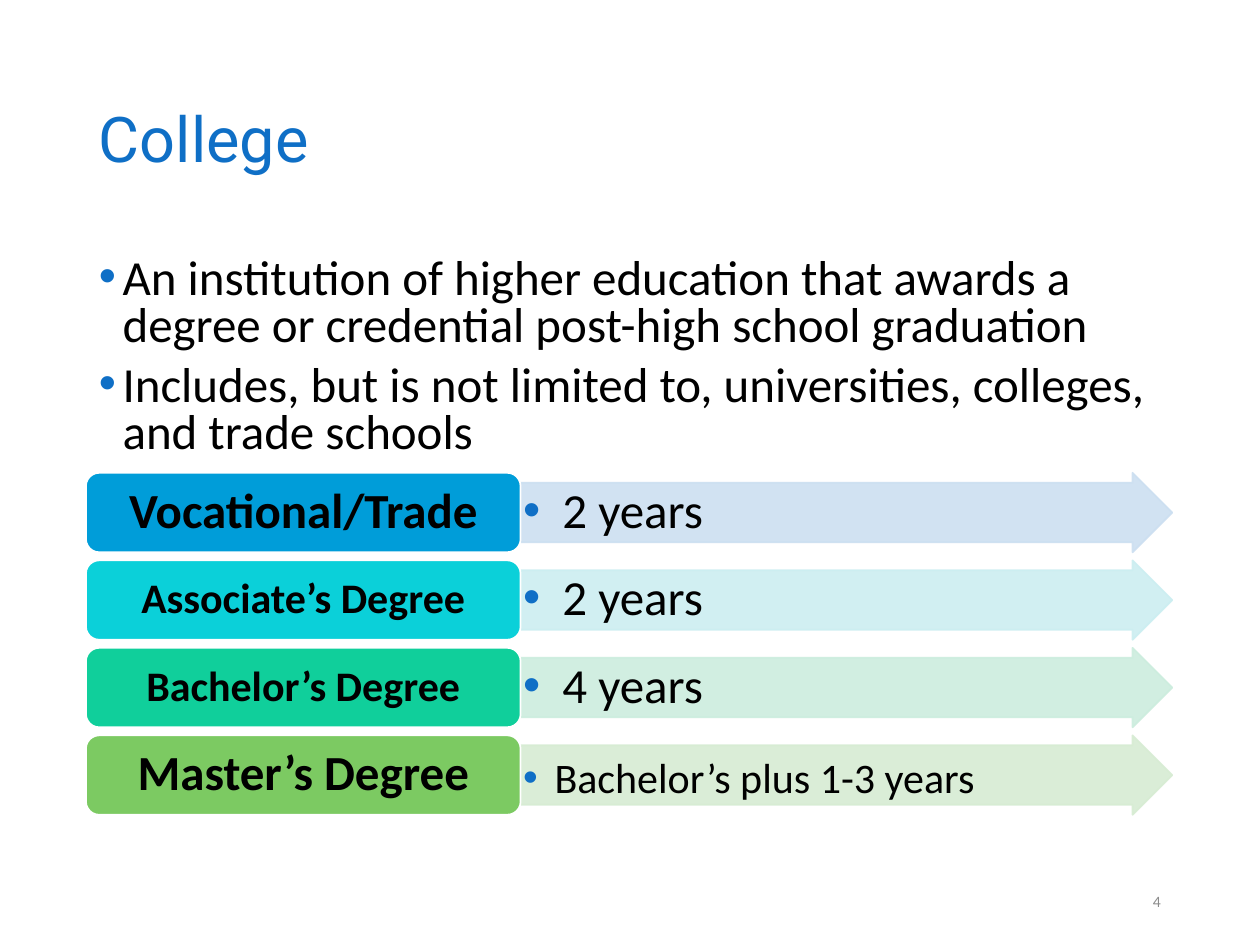
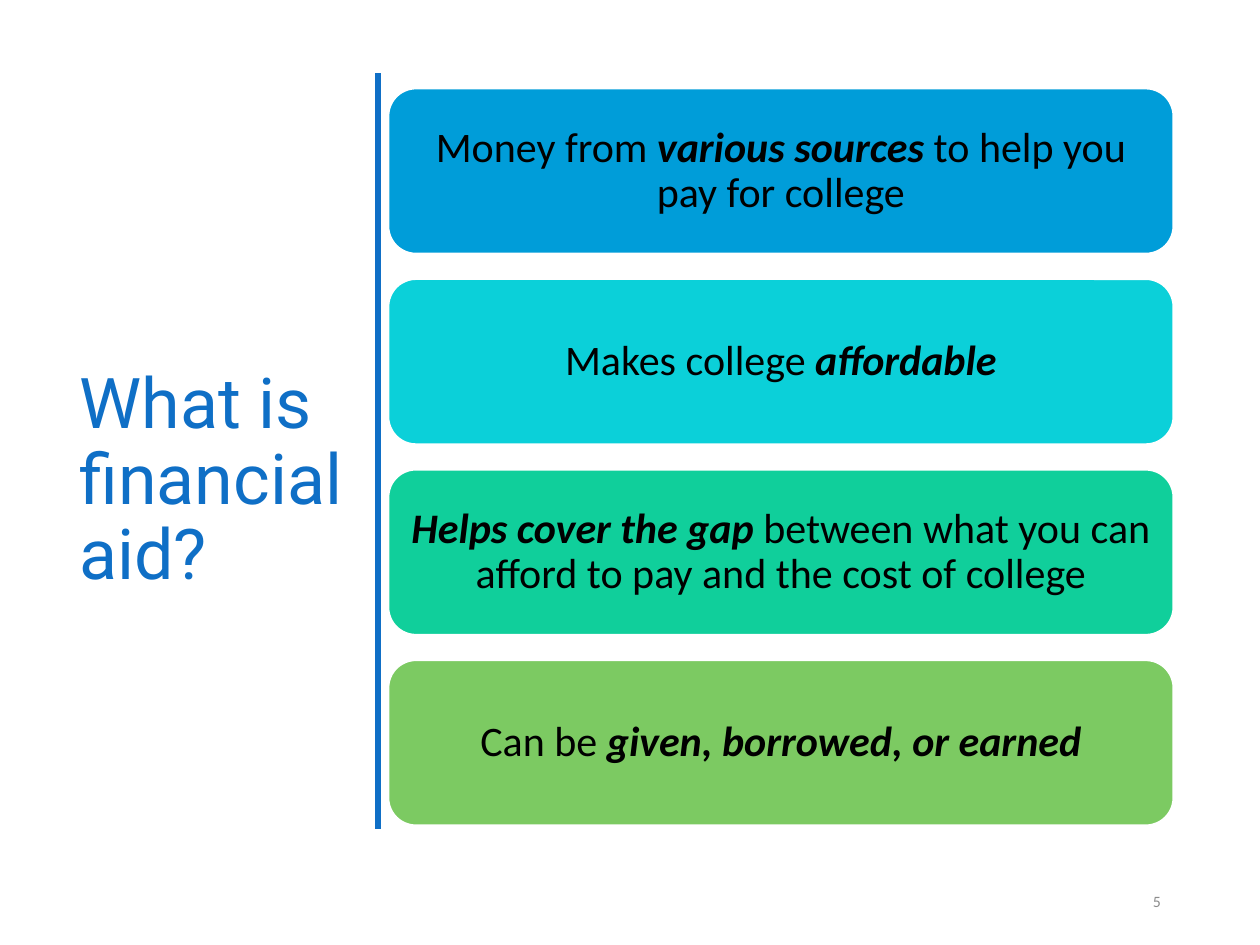
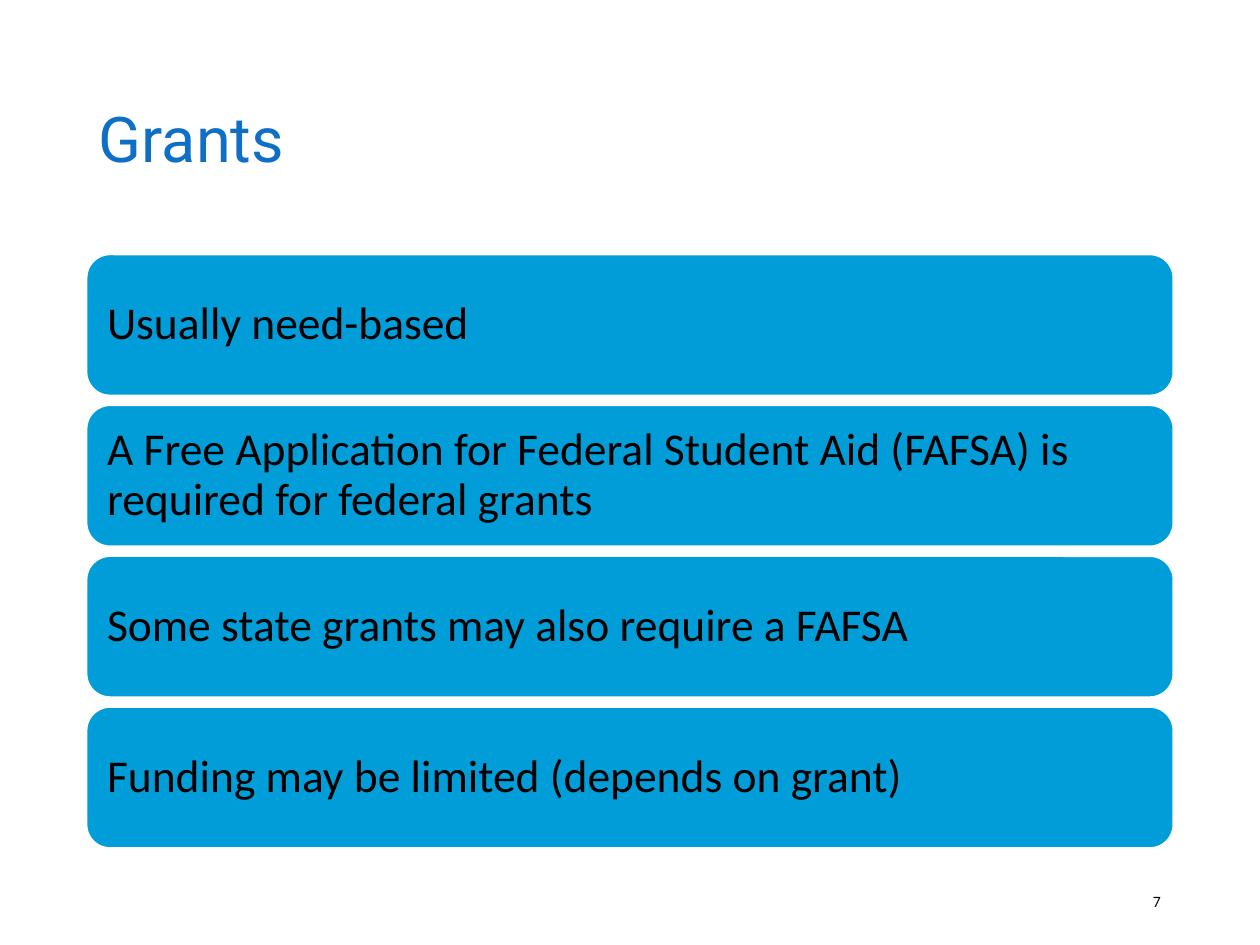
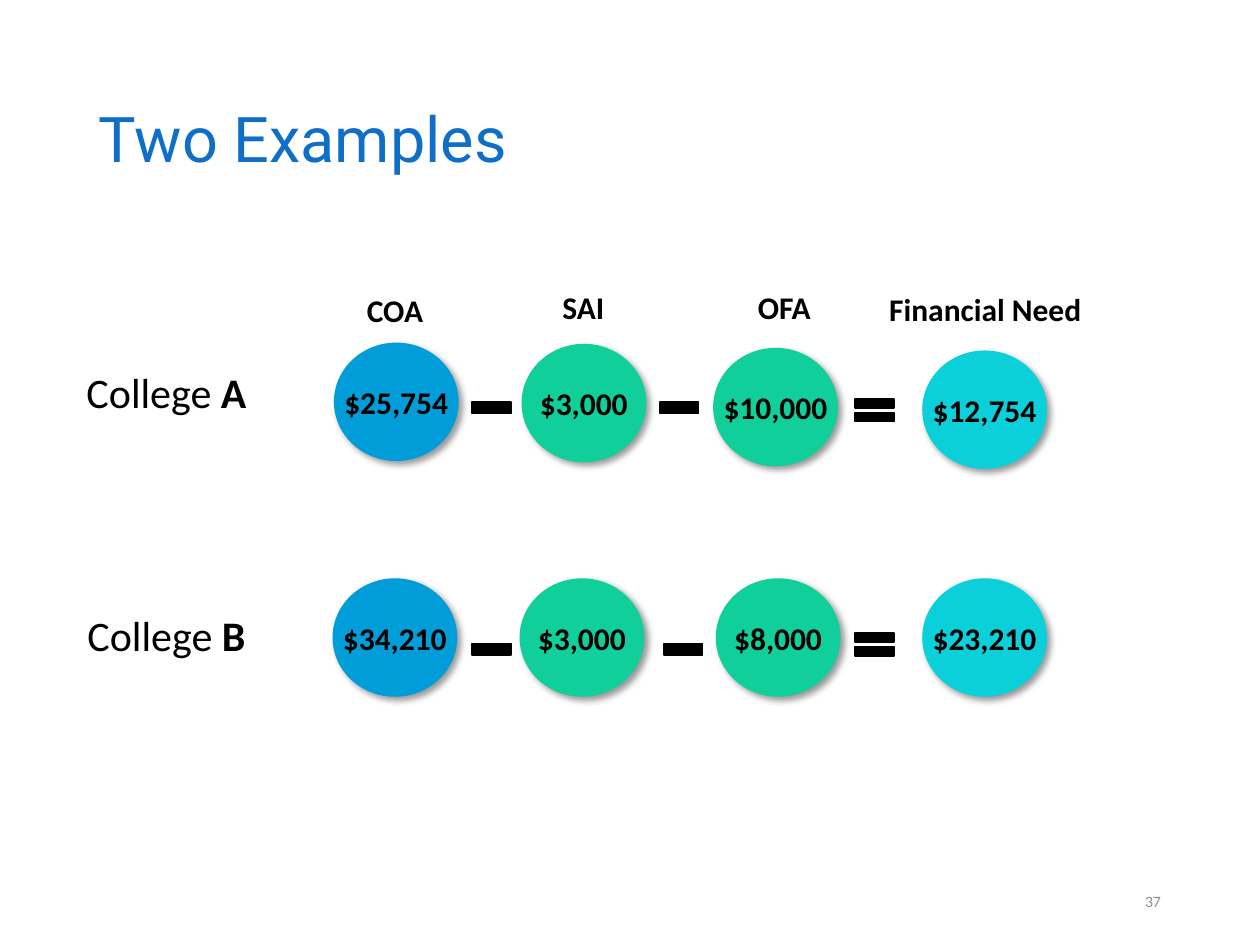
from dataclasses import dataclass
from typing import NamedTuple

from lxml.etree import SubElement
from pptx import Presentation
from pptx.dml.color import RGBColor
from pptx.enum.shapes import MSO_CONNECTOR as Connector, MSO_SHAPE as Shape
from pptx.enum.text import MSO_ANCHOR as Anchor, MSO_AUTO_SIZE as AutoSize, PP_ALIGN as Align
from pptx.oxml.ns import qn
from pptx.util import Pt

# Shared colours and fonts
BLUE = RGBColor(0x0F, 0x6F, 0xC6)
SKY = RGBColor(0x00, 0x9D, 0xD9)
CYAN = RGBColor(0x0B, 0xD0, 0xD9)
MINT = RGBColor(0x10, 0xCF, 0x9B)
GREEN = RGBColor(0x7C, 0xCA, 0x62)
PALE_SKY = RGBColor(0xCC, 0xDF, 0xF1)
PALE_CYAN = RGBColor(0xCC, 0xEE, 0xF1)
PALE_MINT = RGBColor(0xCC, 0xED, 0xDE)
PALE_GREEN = RGBColor(0xD7, 0xEC, 0xD3)
BLACK = RGBColor(0x00, 0x00, 0x00)
WHITE = RGBColor(0xFF, 0xFF, 0xFF)
GRAY = RGBColor(0x8C, 0x8C, 0x8C)
HEADING_FONT = "Roboto"
BODY_FONT = "Calibri"


class Area(NamedTuple):
    left: float
    top: float
    width: float
    height: float

    def lengths(self) -> list:
        return [Pt(value) for value in self]


class Span(NamedTuple):
    text: str
    bold: bool = False
    italic: bool = False


@dataclass
class Style:
    size: float
    color: RGBColor = BLACK
    font: str = BODY_FONT
    align: Align = Align.LEFT
    anchor: Anchor = Anchor.MIDDLE
    spacing: float = 1.0
    before: float = 0
    bullet_indent: float = 0
    inset_x: float = 7.2
    inset_y: float = 3.6
    wrap: bool = True
    grow: bool = False


@dataclass
class Degree:
    name: str
    name_size: float
    name_inset: tuple[float, float]
    color: RGBColor
    years: str
    years_size: float
    years_indent: float
    years_anchor: Anchor
    pale: RGBColor


class Circle(NamedTuple):
    left: float
    top: float
    amount: str
    color: RGBColor


class Sign(NamedTuple):
    kind: Shape
    left: float
    top: float


@dataclass
class College:
    letter: str
    label_top: float
    circles: list[Circle]
    signs: list[Sign]


# Shared styles and places
TITLE_AREA = Area(49.5, 28.75, 621, 104.5)
TITLE = Style(36, BLUE, HEADING_FONT, spacing=0.9)
SIDE_TITLE = Style(40, BLUE, HEADING_FONT, spacing=0.9, inset_x=5, inset_y=3)
NUMBER_AREA = Area(508.5, 500.5, 162, 28.75)
COLUMN_LABEL = Style(18, align=Align.CENTER, anchor=Anchor.TOP, wrap=False, grow=True)
COLLEGE_LABEL = Style(24, align=Align.CENTER, anchor=Anchor.TOP, grow=True)
AMOUNT = Style(18, align=Align.CENTER, wrap=False)
CIRCLE_SIZE = (71.3, 67.7)
SIGN_HEIGHTS = {Shape.MATH_MINUS: 28.1, Shape.MATH_EQUAL: 22.3}
SIGN_WIDTH = 30.2

DEGREES = [
    Degree("Vocational/Trade", 28, (8.6, 4.3), SKY, "2 years", 28, 22.5, Anchor.MIDDLE, PALE_SKY),
    Degree("Associate’s Degree", 24, (7.2, 3.6), CYAN, "2 years", 28, 22.5, Anchor.MIDDLE, PALE_CYAN),
    Degree("Bachelor’s Degree", 24, (7.2, 3.6), MINT, "4 years", 28, 22.5, Anchor.MIDDLE, PALE_MINT),
    Degree("Master’s Degree", 28, (8.6, 4.3), GREEN, "Bachelor’s plus 1-3 years", 24, 18,
           Anchor.BOTTOM, PALE_GREEN),
]

AID_POINTS = [
    (SKY, [Span("Money from "), Span("various sources ", True, True), Span("to help you pay for college")]),
    (CYAN, [Span("Makes college "), Span("affordable", True, True)]),
    (MINT, [Span("Helps cover the gap", True, True),
            Span(" between what you can afford to pay and the cost of college")]),
    (GREEN, [Span("Can be "), Span("given, borrowed, or earned", True, True)]),
]

GRANT_POINTS = [
    "Usually need-based",
    "A Free Application for Federal Student Aid (FAFSA) is required for federal grants",
    "Some state grants may also require a FAFSA",
    "Funding may be limited (depends on grant)",
]

COLUMN_LABELS = [
    ("COA", Area(202.3, 162.7, 46.8, 28.8)),
    ("SAI", Area(313.9, 161.3, 38.9, 28.8)),
    ("OFA", Area(425.5, 161.3, 45.4, 28.8)),
    ("Financial Need", Area(500.4, 162.2, 125.3, 28.8)),
]

COLLEGES = [
    College(
        "A", 206,
        [Circle(190.8, 195.8, "$25,754", SKY), Circle(298, 196.5, "$3,000", MINT),
         Circle(407.5, 198.8, "$10,000", MINT), Circle(527, 200.3, "$12,754", CYAN)],
        [Sign(Shape.MATH_MINUS, 265.7, 218.9), Sign(Shape.MATH_MINUS, 373, 218.9),
         Sign(Shape.MATH_EQUAL, 484.6, 223.2)],
    ),
    College(
        "B", 345,
        [Circle(190, 330.5, "$34,210", SKY), Circle(296.9, 330.5, "$3,000", MINT),
         Circle(409, 330.5, "$8,000", MINT), Circle(527, 330.5, "$23,210", CYAN)],
        [Sign(Shape.MATH_MINUS, 265.7, 357), Sign(Shape.MATH_MINUS, 375.3, 357),
         Sign(Shape.MATH_EQUAL, 484.6, 357)],
    ),
]


# Text
def add_bullet(para, indent: float) -> None:
    props = para._p.get_or_add_pPr()
    props.set("marL", str(Pt(indent)))
    props.set("indent", str(-Pt(indent)))
    color = SubElement(props, qn("a:buClr"))
    SubElement(color, qn("a:srgbClr"), val=str(BLUE))
    SubElement(props, qn("a:buFont"), typeface="Arial")
    SubElement(props, qn("a:buChar"), char="•")


def write(box, paragraphs: list[list[Span]], style: Style) -> None:
    frame = box.text_frame
    frame.word_wrap = style.wrap
    frame.auto_size = AutoSize.SHAPE_TO_FIT_TEXT if style.grow else AutoSize.NONE
    frame.vertical_anchor = style.anchor
    frame.margin_left = frame.margin_right = Pt(style.inset_x)
    frame.margin_top = frame.margin_bottom = Pt(style.inset_y)
    for index, spans in enumerate(paragraphs):
        para = frame.add_paragraph() if index else frame.paragraphs[0]
        if style.bullet_indent:
            add_bullet(para, style.bullet_indent)
        para.alignment = style.align
        para.line_spacing = style.spacing
        if index:
            para.space_before = Pt(style.before)
        for span in spans:
            run = para.add_run()
            run.text = span.text
            font = run.font
            font.name, font.size = style.font, Pt(style.size)
            font.bold, font.italic = span.bold, span.italic
            font.color.rgb = style.color


def add_text(page, area: Area, paragraphs: list[list[Span]], style: Style) -> None:
    write(page.shapes.add_textbox(*area.lengths()), paragraphs, style)


# Shapes
def add_block(page, kind: Shape, area: Area, color: RGBColor, line: RGBColor | None = None):
    block = page.shapes.add_shape(kind, *area.lengths())
    block.shadow.inherit = False
    block.fill.solid()
    block.fill.fore_color.rgb = color
    if line is None:
        block.line.fill.background()
    else:
        block.line.color.rgb = line
        block.line.width = Pt(1)
    return block


def add_card(page, area: Area, color: RGBColor, spans: list[Span], style: Style) -> None:
    write(add_block(page, Shape.ROUNDED_RECTANGLE, area, color, WHITE), [spans], style)


def add_arrow(page, area: Area, degree: Degree) -> None:
    arrow = add_block(page, Shape.RIGHT_ARROW, area, degree.pale, degree.pale)
    arrow.adjustments[0] = 0.75
    arrow.adjustments[1] = 0.5
    for color in list(arrow.element.spPr.iter(qn("a:srgbClr"))):
        SubElement(color, qn("a:alpha"), val="90000")
    style = Style(degree.years_size, anchor=degree.years_anchor, spacing=0.9,
                  bullet_indent=degree.years_indent, inset_x=1.4, inset_y=1.4)
    write(arrow, [[Span(degree.years)]], style)


def add_circle(page, circle: Circle) -> None:
    disc = add_block(page, Shape.OVAL, Area(circle.left, circle.top, *CIRCLE_SIZE), circle.color)
    effects = disc.element.spPr.find(qn("a:effectLst"))
    shadow = SubElement(effects, qn("a:outerShdw"), blurRad=str(Pt(4)), dist=str(Pt(3)),
                        dir=str(45 * 60000), algn="tl", rotWithShape="0")
    color = SubElement(shadow, qn("a:srgbClr"), val=str(BLACK))
    SubElement(color, qn("a:alpha"), val="40000")
    write(disc, [[Span(circle.amount, True)]], AMOUNT)


# Slides
def new_page(deck, number: int, title: str, number_color: RGBColor = GRAY,
             title_area: Area = TITLE_AREA, title_style: Style = TITLE):
    page = deck.slides.add_slide(deck.slide_layouts[6])
    add_text(page, title_area, [[Span(title)]], title_style)
    add_text(page, NUMBER_AREA, [[Span(str(number))]], Style(9, number_color, align=Align.RIGHT))
    return page


def build_college(deck) -> None:
    page = new_page(deck, 4, "College")
    body = Style(28, anchor=Anchor.TOP, spacing=0.8, before=7.5, bullet_indent=13.5)
    add_text(page, Area(49.5, 143.75, 621, 132.5), [
        [Span("An institution of higher education that awards a degree or credential "
              "post-high school graduation")],
        [Span("Includes, but is not limited to, universities, colleges, and trade schools")],
    ], body)
    for row, degree in enumerate(DEGREES):
        top = 270.2 + 50 * row
        add_arrow(page, Area(297.5, top, 372.4, 45.4), degree)
        inset_x, inset_y = degree.name_inset
        style = Style(degree.name_size, align=Align.CENTER, spacing=0.9,
                      inset_x=inset_x, inset_y=inset_y)
        add_card(page, Area(49.1, top, 248.4, 45.4), degree.color, [Span(degree.name, True)], style)


def build_financial_aid(deck) -> None:
    page = new_page(deck, 5, "What is financial aid?", GRAY,
                    Area(40.5, 103.5, 169, 343.5), SIDE_TITLE)
    style = Style(24, align=Align.CENTER, spacing=0.9, inset_x=7.2, inset_y=7.2)
    for row, (color, spans) in enumerate(AID_POINTS):
        add_card(page, Area(222, 50.6 + 108.9 * row, 448.5, 94.3), color, spans, style)
    # Rule between title and cards
    rule = page.shapes.add_connector(Connector.STRAIGHT, Pt(216), Pt(42), Pt(216), Pt(474))
    rule.line.color.rgb = BLUE
    rule.line.width = Pt(3)
    SubElement(rule.element.spPr, qn("a:effectLst"))


def build_grants(deck) -> None:
    page = new_page(deck, 7, "Grants", BLACK)
    style = Style(26, spacing=0.9, inset_x=7.8, inset_y=7.8)
    for row, text in enumerate(GRANT_POINTS):
        add_card(page, Area(49.5, 145.4 + 86.2 * row, 621, 80.6), SKY, [Span(text)], style)


def build_examples(deck) -> None:
    page = new_page(deck, 37, "Two Examples")
    for text, area in COLUMN_LABELS:
        add_text(page, area, [[Span(text, True)]], COLUMN_LABEL)
    for college in COLLEGES:
        add_text(page, Area(34.6, college.label_top, 121, 36.3),
                 [[Span("College "), Span(college.letter, True)]], COLLEGE_LABEL)
        for circle in college.circles:
            add_circle(page, circle)
        for sign in college.signs:
            area = Area(sign.left, sign.top, SIGN_WIDTH, SIGN_HEIGHTS[sign.kind])
            add_block(page, sign.kind, area, BLACK, BLACK)


def main() -> None:
    deck = Presentation()
    deck.slide_width, deck.slide_height = Pt(720), Pt(540)
    build_college(deck)
    build_financial_aid(deck)
    build_grants(deck)
    build_examples(deck)
    deck.save("out.pptx")


if __name__ == "__main__":
    main()
